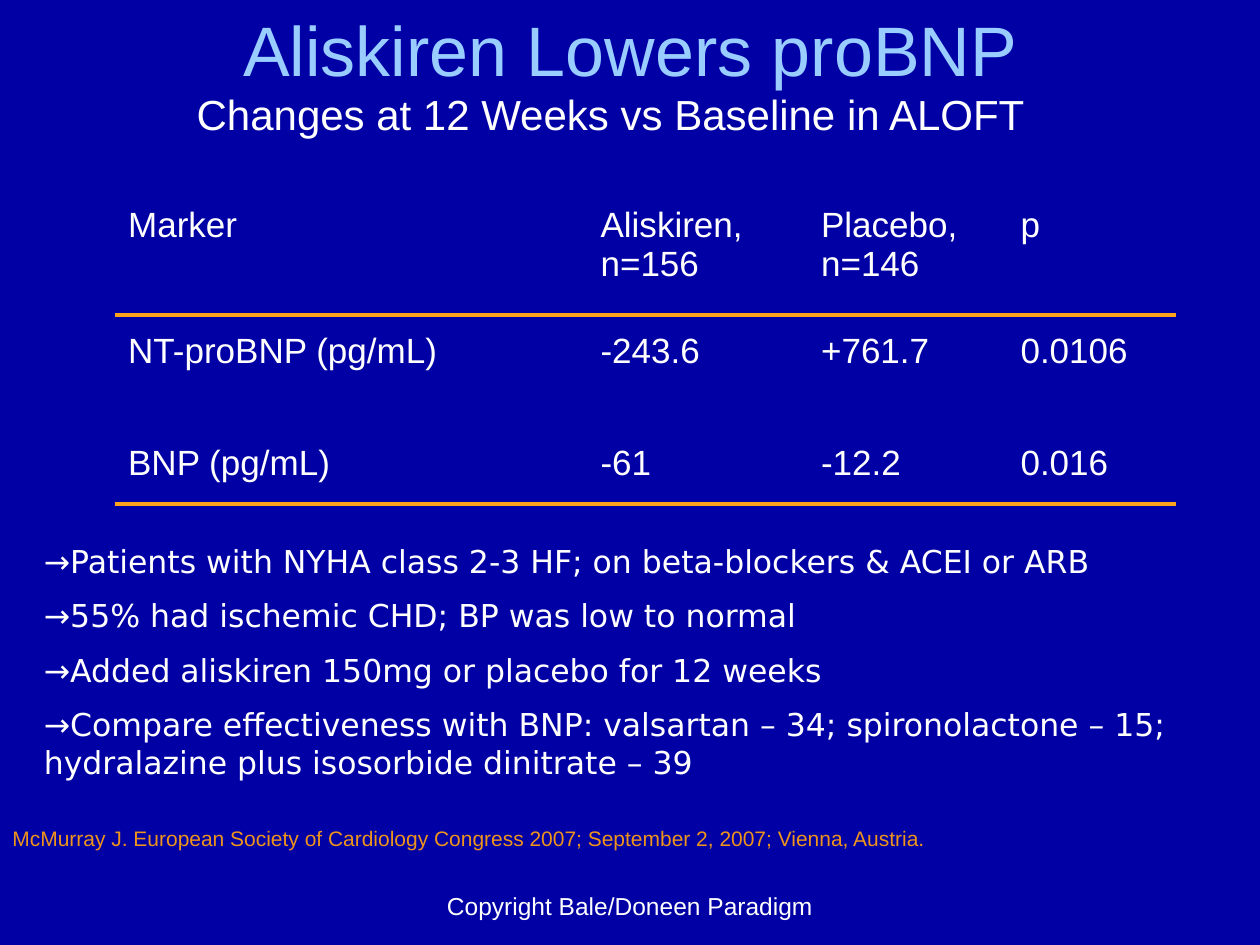
"""Build the slide on aliskiren and proBNP."""
from typing import NamedTuple

from lxml import etree
from pptx import Presentation
from pptx import util as u
from pptx.dml.color import RGBColor
from pptx.enum import shapes, text
from pptx.oxml import ns

NAVY = RGBColor(0x00, 0x00, 0xA4)
WHITE = RGBColor(0xFF, 0xFF, 0xFF)
SKY = RGBColor(0x99, 0xCC, 0xFF)
AMBER = RGBColor(0xFF, 0xA3, 0x1B)
RUST = RGBColor(0xEE, 0x94, 0x1C)

LEFT = text.PP_ALIGN.LEFT
MID = text.PP_ALIGN.CENTER
TOP = text.MSO_ANCHOR.TOP
CENTRE = text.MSO_ANCHOR.MIDDLE
BASE = text.MSO_ANCHOR.BOTTOM


class Note(NamedTuple):
    """A text box with one style."""
    words: str
    left: float
    top: float
    width: float
    height: float
    size: float
    color: RGBColor = WHITE
    face: str = "Arial"
    align: text.PP_ALIGN = LEFT
    anchor: text.MSO_ANCHOR = TOP
    gap: float = 0
    drop: float = 0
    inset: float = 0


class Rule(NamedTuple):
    """A level line across the table."""
    left: float
    right: float
    y: float


FACTS = "\n".join((
    "→Patients with NYHA class 2-3 HF; on beta-blockers & ACEI or ARB",
    "→55% had ischemic CHD; BP was low to normal",
    "→Added aliskiren 150mg or placebo for 12 weeks",
    "→Compare effectiveness with BNP: valsartan – 34; spironolactone – 15; "
    "hydralazine plus isosorbide dinitrate – 39",
))
SOURCE = ("McMurray J. European Society of Cardiology Congress 2007; "
          "September 2, 2007; Vienna, Austria.")

NOTES = (
    Note("Copyright Bale/Doneen Paradigm", 246, 492, 228, 37.5, 14,
         align=MID, anchor=BASE),
    Note(FACTS, 18, 306, 720, 148, 18, face="DejaVu Sans", gap=9.5),
    Note(SOURCE, 0, 468, 630, 21.6, 12, RUST),
    Note("Changes at 12 Weeks vs Baseline in ALOFT", 48, 36, 612, 50.4, 24,
         align=MID, anchor=CENTRE, drop=8, inset=10),
    Note("Aliskiren Lowers proBNP", 0, 0, 720, 55.4, 40, SKY, align=MID),
)
RULES = tuple(Rule(66, 672, y) for y in (180, 288))

COLS = (270, 126, 114, 114)
ROWS = (72, 64, 64, 64, 90.5)
CELLS = (
    ("Marker", "Aliskiren, n=156", "Placebo, n=146", "p"),
    ("NT-proBNP (pg/mL)", "-243.6", "+761.7", "0.0106"),
    ("BNP (pg/mL)", "-61", "-12.2", "0.016"),
)


def style(para, size: float, color: RGBColor, face: str = "Arial") -> None:
    """Format each run of a paragraph."""
    for run in para.runs:
        run.font.size = u.Pt(size)
        run.font.name = face
        run.font.color.rgb = color


def draw_note(slide, note: Note) -> None:
    """Draw one text box."""
    box = slide.shapes.add_textbox(u.Pt(note.left), u.Pt(note.top),
                                   u.Pt(note.width), u.Pt(note.height))
    frame = box.text_frame
    frame.word_wrap = True
    frame.vertical_anchor = note.anchor
    frame.margin_top = u.Pt(3.6 + note.drop)
    frame.margin_right = u.Pt(7.2 + note.inset)
    frame.text = note.words
    for rank, para in enumerate(frame.paragraphs):
        para.alignment = note.align
        para.space_before = u.Pt(note.gap if rank else 0)
        style(para, note.size, note.color, note.face)


def draw_rule(slide, rule: Rule) -> None:
    """Draw one level line."""
    line = slide.shapes.add_connector(
        shapes.MSO_CONNECTOR.STRAIGHT, u.Pt(rule.left), u.Pt(rule.y),
        u.Pt(rule.right), u.Pt(rule.y))
    line.line.color.rgb = AMBER
    line.line.width = u.Pt(2.25)
    etree.SubElement(line._element.spPr, ns.qn("a:effectLst"))


def clear(cell) -> None:
    """Strip the fill and borders of a cell."""
    cell.fill.background()
    props = cell._tc.get_or_add_tcPr()
    for rank, side in enumerate(("lnL", "lnR", "lnT", "lnB")):
        edge = etree.Element(ns.qn(f"a:{side}"))
        etree.SubElement(edge, ns.qn("a:noFill"))
        props.insert(rank, edge)


def draw_table(slide) -> None:
    """Draw the table of markers."""
    table = slide.shapes.add_table(
        len(ROWS), len(COLS), u.Pt(66), u.Pt(114),
        u.Pt(sum(COLS)), u.Pt(sum(ROWS))).table
    table.first_row = table.horz_banding = False
    for col, width in zip(table.columns, COLS):
        col.width = u.Pt(width)
    for row, height in zip(table.rows, ROWS):
        row.height = u.Pt(height)
    for cell in table.iter_cells():
        clear(cell)
    for row, words in zip(table.rows, CELLS):
        for cell, word in zip(row.cells, words):
            cell.text_frame.text = word
            style(cell.text_frame.paragraphs[0], 20, WHITE)


def main() -> None:
    """Build and save the slide."""
    deck = Presentation()
    deck.slide_width, deck.slide_height = u.Pt(720), u.Pt(540)
    slide = deck.slides.add_slide(deck.slide_layouts[6])
    slide.background.fill.solid()
    slide.background.fill.fore_color.rgb = NAVY
    for note in NOTES:
        draw_note(slide, note)
    draw_table(slide)
    for rule in RULES:
        draw_rule(slide, rule)
    deck.save("out.pptx")


if __name__ == "__main__":
    main()
